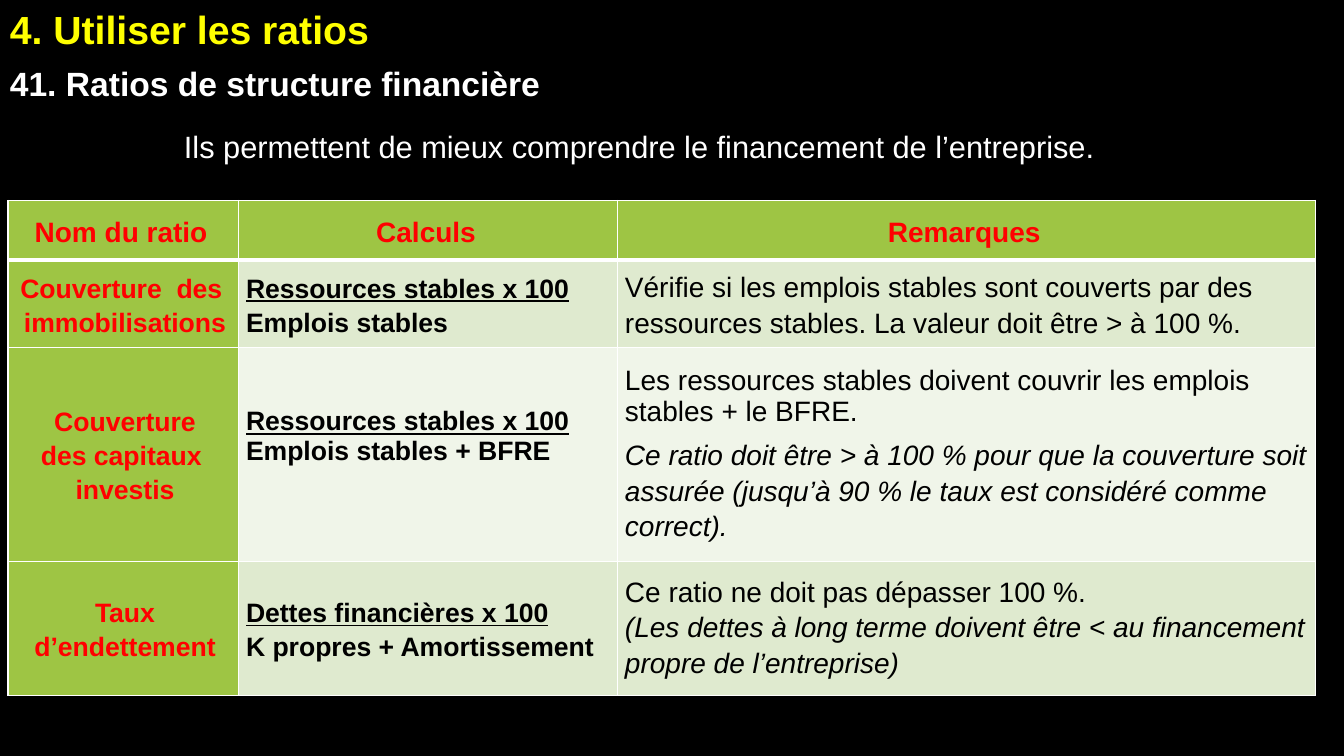
from lxml import etree
from pptx import Presentation
from pptx.dml.color import RGBColor
from pptx.enum.text import MSO_ANCHOR, MSO_AUTO_SIZE, PP_ALIGN
from pptx.oxml.ns import qn
from pptx.util import Cm, Pt

LEFT, CENTER, JUSTIFY = PP_ALIGN.LEFT, PP_ALIGN.CENTER, PP_ALIGN.JUSTIFY
MIDDLE = MSO_ANCHOR.MIDDLE
GROW = MSO_AUTO_SIZE.SHAPE_TO_FIT_TEXT

FONT = "Arial"
COLORS = {
    "background": "000000", "title": "FFFF00", "light": "FFFFFF",
    "label": "FF0000", "dark": "000000", "border": "FFFFFF",
    "header": "9EC544", "band_odd": "DFEACF", "band_even": "F0F5E9",
}

# Each paragraph is (text, format overrides)
TITLE = [("4. Utiliser les ratios", {})]
INTRO = [
    ("41. Ratios de structure financière", {"bold": True, "size": 24, "alignment": JUSTIFY}),
    ("Ils permettent de mieux comprendre le financement de l’entreprise. ", {}),
]
UNDERLINED = {"underline": True}
ITALIC = {"italic": True}
SINGLE = {"line_spacing": 1.0}
HEADERS = ["Nom du ratio ", "Calculs ", "Remarques "]
RATIOS = [
    (
        [("Couverture  des ", {}), ("immobilisations", {})],
        [("Ressources stables x 100", UNDERLINED), ("Emplois stables", {})],
        [("Vérifie si les emplois stables sont couverts par des ressources "
          "stables. La valeur doit être > à 100 %.", {})],
    ),
    (
        [("Couverture", {}), ("des capitaux ", {}), ("investis", {})],
        [("Ressources stables x 100", UNDERLINED | SINGLE),
         ("Emplois stables + BFRE", SINGLE)],
        [("Les ressources stables doivent couvrir les emplois stables + le BFRE.",
          {"line_spacing": 0.98, "space_after": Pt(5.6)}),
         ("Ce ratio doit être > à 100 % pour que la couverture soit assurée "
          "(jusqu’à 90 % le taux est considéré comme correct).", ITALIC)],
    ),
    (
        [("Taux", {}), ("d’endettement", {})],
        [("Dettes financières x 100", UNDERLINED), ("K propres + Amortissement", {})],
        [("Ce ratio ne doit pas dépasser 100 %.", SINGLE),
         ("(Les dettes à long terme doivent être < au financement propre "
          "de l’entreprise)", ITALIC)],
    ),
]

TITLE_FORMAT = {"size": 28, "bold": True, "color": "title",
                "space_before": Pt(3), "space_after": Pt(3)}
INTRO_FORMAT = {"size": 22, "color": "light", "alignment": CENTER,
                "space_before": Pt(12), "space_after": Pt(6)}
HEADER_FORMAT = {"size": 20, "bold": True, "color": "label",
                 "alignment": CENTER, "line_spacing": 1.15}
COLUMN_FORMATS = [
    HEADER_FORMAT | {"size": 19},
    {"size": 19, "bold": True, "color": "dark", "alignment": LEFT, "line_spacing": 1.15},
    {"size": 20, "color": "dark", "alignment": LEFT, "line_spacing": 1.15},
]
PARAGRAPH_KEYS = {"alignment", "line_spacing", "space_before", "space_after"}

TABLE_LEFT, TABLE_TOP = 0.2, 5.05
COLUMN_WIDTHS = [5.82, 9.55, 17.58]
ROW_HEIGHTS = [1.5, 2.21, 5.38, 3.38]
CELL_MARGINS = {"margin_left": 0.18, "margin_top": 0, "margin_right": 0.1, "margin_bottom": 0}
RAISED_CELL, RAISED_MARGIN = (2, 1), 0.9


def rgb(name):
    return RGBColor.from_string(COLORS[name])


def write(tf, paragraphs, base):
    """Fill a text frame; each paragraph's overrides extend the base format."""
    for i, (text, overrides) in enumerate(paragraphs):
        p = tf.paragraphs[0] if i == 0 else tf.add_paragraph()
        r = p.add_run()
        r.text = text
        r.font.name = FONT
        for key, value in (base | overrides).items():
            if key == "color":
                r.font.color.rgb = rgb(value)
            elif key == "size":
                r.font.size = Pt(value)
            else:
                setattr(p if key in PARAGRAPH_KEYS else r.font, key, value)


def add_text(s, box, paragraphs, base):
    tf = s.shapes.add_textbox(*map(Cm, box)).text_frame
    tf.word_wrap = True
    tf.auto_size = GROW
    write(tf, paragraphs, base)


def set_borders(cell, widths):
    """Draw cell borders; widths maps L, R, T, B (in that order) to points."""
    tcPr = cell._tc.get_or_add_tcPr()
    for side, width in widths.items():
        ln = etree.SubElement(tcPr, qn(f"a:ln{side}"), w=str(Pt(width)))
        fill = etree.SubElement(ln, qn("a:solidFill"))
        etree.SubElement(fill, qn("a:srgbClr"), val=COLORS["border"])


def add_ratio_table(s):
    rows = [[[(text, {})] for text in HEADERS], *RATIOS]
    table = s.shapes.add_table(
        len(rows), len(HEADERS), Cm(TABLE_LEFT), Cm(TABLE_TOP),
        Cm(sum(COLUMN_WIDTHS)), Cm(sum(ROW_HEIGHTS))).table
    for column, width in zip(table.columns, COLUMN_WIDTHS):
        column.width = Cm(width)
    for row, height in zip(table.rows, ROW_HEIGHTS):
        row.height = Cm(height)
    for i, row in enumerate(rows):
        band = "band_odd" if i % 2 else "band_even"
        for j, paragraphs in enumerate(row):
            cell = table.cell(i, j)
            set_borders(cell, {"L": 1, "R": 1, "T": 3 if i == 1 else 1, "B": 3 if i == 0 else 1})
            cell.fill.solid()
            cell.fill.fore_color.rgb = rgb("header" if i == 0 or j == 0 else band)
            cell.vertical_anchor = MIDDLE
            for side, margin in CELL_MARGINS.items():
                setattr(cell, side, Cm(margin))
            write(cell.text_frame, paragraphs, HEADER_FORMAT if i == 0 else COLUMN_FORMATS[j])
    table.cell(*RAISED_CELL).margin_bottom = Cm(RAISED_MARGIN)


def main():
    prs = Presentation()
    prs.slide_width, prs.slide_height = Cm(33.87), Cm(19.05)
    s = prs.slides.add_slide(prs.slide_layouts[6])
    s.background.fill.solid()
    s.background.fill.fore_color.rgb = rgb("background")
    add_text(s, (0, 0, 27.79, 1.45), TITLE, TITLE_FORMAT)
    add_text(s, (0, 1.45, 32.44, 2.87), INTRO, INTRO_FORMAT)
    add_ratio_table(s)
    prs.save("out.pptx")


if __name__ == "__main__":
    main()
